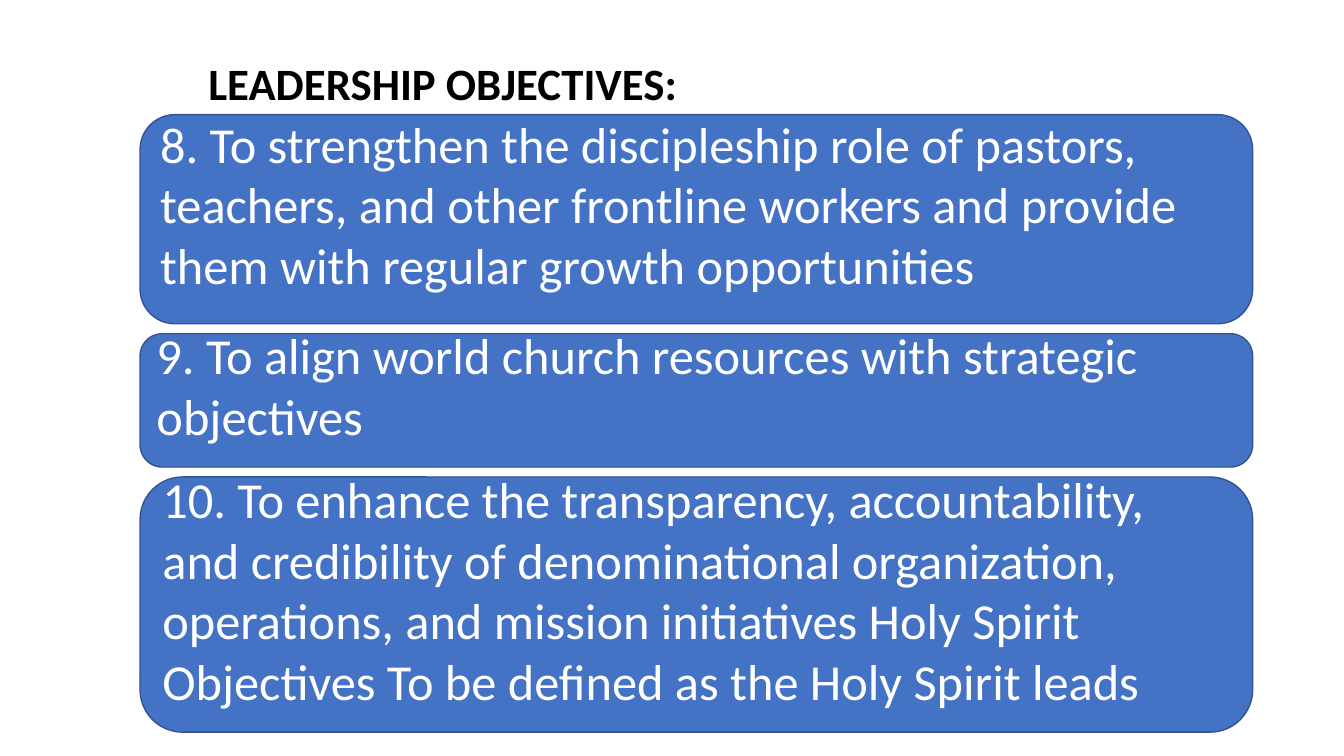
from pptx import Presentation
from pptx.dml.color import RGBColor
from pptx.enum.shapes import MSO_SHAPE
from pptx.enum.text import MSO_ANCHOR, PP_ALIGN
from pptx.util import Cm, Pt


def color(code):
    return RGBColor.from_string(code)


class Deck:
    font = "Calibri"
    fill = "4472C4"
    edge = "325491"
    light = "FFFFFF"
    dark = "000000"

    def __init__(self):
        self.prs = Presentation()
        self.prs.slide_width = Cm(33.87)
        self.prs.slide_height = Cm(19.05)
        self.slide = self.prs.slides.add_slide(self.prs.slide_layouts[6])

    def label(self, frame, text, size, ink, bold=False):
        frame.word_wrap = True
        para = frame.paragraphs[0]
        para.text = text
        para.alignment = PP_ALIGN.LEFT
        para.font.name = self.font
        para.font.size = Pt(size)
        para.font.bold = bold
        para.font.color.rgb = color(ink)

    def title(self, text, left, top, width, height):
        box = self.slide.shapes.add_textbox(
            Cm(left), Cm(top), Cm(width), Cm(height))
        self.label(box.text_frame, text, 32, self.dark, bold=True)

    def card(self, text, left, top, width, height):
        """Add a rounded box whose text sits a little above the middle."""
        box = self.slide.shapes.add_shape(
            MSO_SHAPE.ROUNDED_RECTANGLE,
            Cm(left), Cm(top), Cm(width), Cm(height))
        box.shadow.inherit = False
        box.fill.solid()
        box.fill.fore_color.rgb = color(self.fill)
        box.line.color.rgb = color(self.edge)
        box.line.width = Pt(1)
        frame = box.text_frame
        frame.vertical_anchor = MSO_ANCHOR.MIDDLE
        frame.margin_bottom = Cm(0.9)
        self.label(frame, text, 36, self.light)


GOALS = [
    ("8. To strengthen the discipleship role of pastors, teachers, and other "
     "frontline workers and provide them with regular growth opportunities",
     5.27),
    ("9. To align world church resources with strategic objectives", 3.36),
    ("10. To enhance the transparency, accountability, and credibility of "
     "denominational organization, operations, and mission initiatives Holy "
     "Spirit Objectives To be defined as the Holy Spirit leads", 6.43),
]
GAP = 0.25


def main():
    deck = Deck()
    deck.title("LEADERSHIP OBJECTIVES:", 5, 1.27, 16.94, 1.63)
    top = 2.89
    for text, height in GOALS:
        deck.card(text, 3.53, top, 28.04, height)
        top += height + GAP
    deck.prs.save("out.pptx")


if __name__ == "__main__":
    main()
